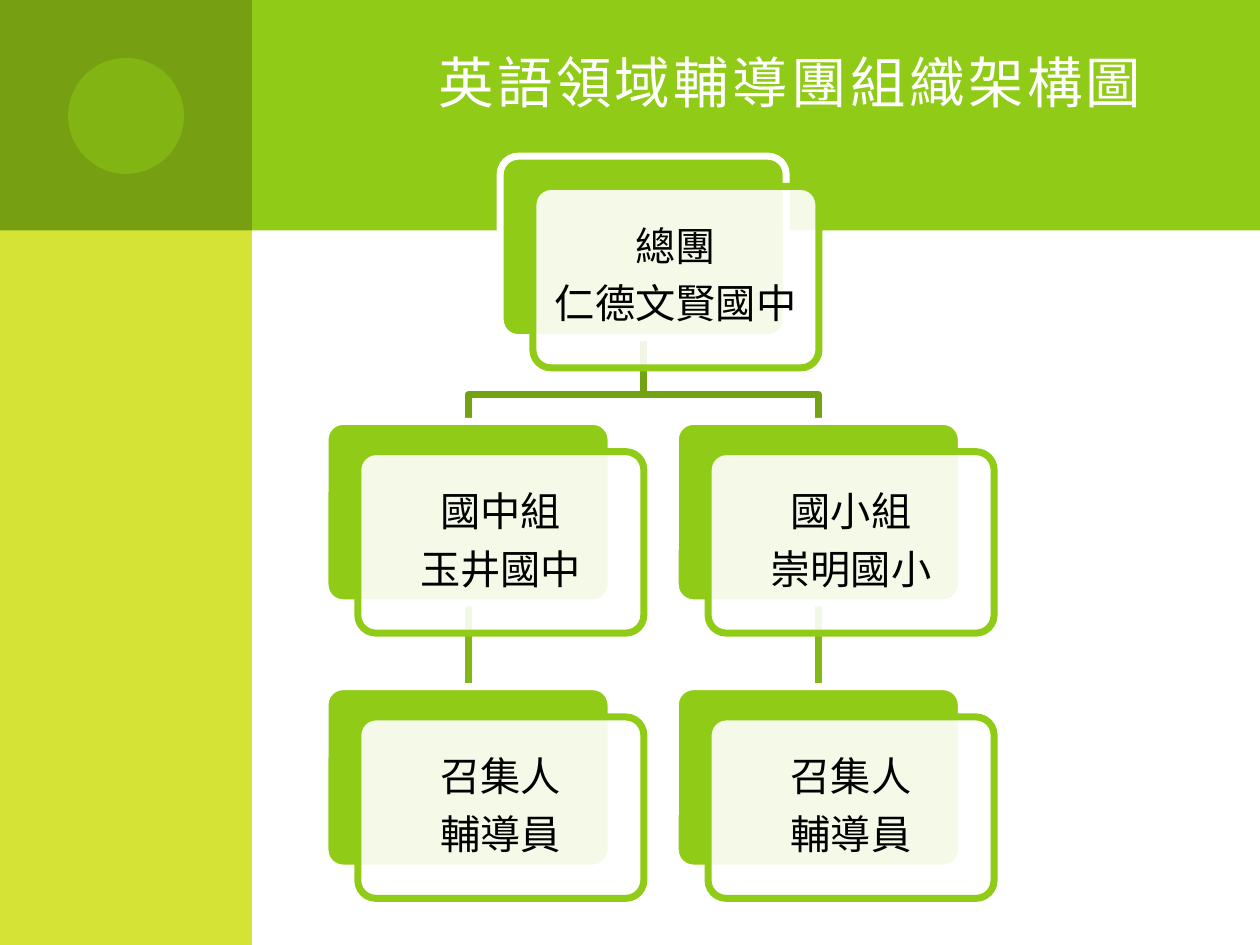
from dataclasses import dataclass

from lxml.etree import SubElement
from pptx import Presentation
from pptx.dml.color import RGBColor
from pptx.enum.shapes import MSO_CONNECTOR, MSO_SHAPE
from pptx.enum.text import MSO_ANCHOR, PP_ALIGN
from pptx.oxml.ns import qn
from pptx.util import Inches, Pt

COLORS = {
    "green": "8FCB17",
    "dark green": "769F11",
    "lime": "D4E336",
    "upper branch": "73A312",
    "lower branch": "82B815",
    "white": "FFFFFF",
    "black": "000000",
}
SLIDE_WIDTH, SLIDE_HEIGHT = 10, 7.5
SIDE_WIDTH = SLIDE_WIDTH * 0.2
BAND_HEIGHT = 1.83

# Chart grid: place of the first cell, and the step from cell to cell
GRID_LEFT, GRID_TOP = 2.58, 1.24
COLUMN_STEP, ROW_STEP = 2.78, 2.105
CARD_WIDTH, CARD_HEIGHT = 2.27, 1.44
FRONT_SHIFT_X, FRONT_SHIFT_Y = 0.26, 0.24
BEND_SHARE = 0.68
LINE_WIDTH = Pt(4)


@dataclass(frozen=True)
class Panel:
    left: float
    top: float
    width: float
    height: float
    color: str
    preset: MSO_SHAPE = MSO_SHAPE.RECTANGLE
    opacity: int = 100


@dataclass(frozen=True)
class Card:
    column: float
    row: int
    text: str

    @property
    def left(self) -> float:
        return GRID_LEFT + self.column * COLUMN_STEP

    @property
    def top(self) -> float:
        return GRID_TOP + self.row * ROW_STEP


PANELS = [
    Panel(0.5, 0, SLIDE_WIDTH - 0.5, BAND_HEIGHT, "green"),
    Panel(0, 0, SIDE_WIDTH, SLIDE_HEIGHT, "lime"),
    Panel(0, 0, SIDE_WIDTH, BAND_HEIGHT, "dark green"),
    Panel(0.54, 0.46, 0.92, 0.92, "green", MSO_SHAPE.OVAL, 50),
]
HEAD = Card(0.5, 0, "總團\n仁德文賢國中")
GROUPS = [Card(0, 1, "國中組\n玉井國中"), Card(1, 1, "國小組\n崇明國小")]
TEAMS = [Card(column, 2, "召集人\n輔導員") for column in (0, 1)]


def rgb(name: str) -> RGBColor:
    return RGBColor.from_string(COLORS[name])


def add_panel(slide, panel: Panel):
    shape = slide.shapes.add_shape(
        panel.preset, Inches(panel.left), Inches(panel.top),
        Inches(panel.width), Inches(panel.height))
    shape.shadow.inherit = False
    shape.line.fill.background()
    shape.fill.solid()
    shape.fill.fore_color.rgb = rgb(panel.color)
    if panel.opacity < 100:
        color = shape._element.spPr.find(qn("a:solidFill"))[0]
        SubElement(color, qn("a:alpha"), val=str(panel.opacity * 1000))
    return shape


def style_line(shape, color: str) -> None:
    shape.line.color.rgb = rgb(color)
    shape.line.width = LINE_WIDTH


def add_title(slide, text: str) -> None:
    box = slide.shapes.add_textbox(
        Inches(1.69), Inches(0.25), Inches(7.81), Inches(0.7))
    text_frame = box.text_frame
    text_frame.word_wrap = True
    text_frame.vertical_anchor = MSO_ANCHOR.MIDDLE
    text_frame.text = text
    paragraph = text_frame.paragraphs[0]
    paragraph.alignment = PP_ALIGN.RIGHT
    run = paragraph.runs[0]
    run.font.name = "Roboto"
    run.font.size = Pt(39.6)
    run.font.color.rgb = rgb("white")
    properties = run.font._element
    properties.set("spc", "200")
    properties.set("cap", "small")


def add_card(slide, card: Card):
    """Draw a filled back plate and a shifted text plate; return the back."""
    back = add_panel(slide, Panel(
        card.left, card.top, CARD_WIDTH, CARD_HEIGHT,
        "green", MSO_SHAPE.ROUNDED_RECTANGLE))
    front = add_panel(slide, Panel(
        card.left + FRONT_SHIFT_X, card.top + FRONT_SHIFT_Y,
        CARD_WIDTH, CARD_HEIGHT, "white", MSO_SHAPE.ROUNDED_RECTANGLE, 90))
    for plate, outline in ((back, "white"), (front, "green")):
        plate.adjustments[0] = 0.1
        style_line(plate, outline)

    text_frame = front.text_frame
    text_frame.word_wrap = True
    text_frame.vertical_anchor = MSO_ANCHOR.MIDDLE
    text_frame.margin_left = text_frame.margin_right = Inches(0.1)
    text_frame.margin_top = text_frame.margin_bottom = Inches(0.1)
    text_frame.text = card.text
    for paragraph in text_frame.paragraphs:
        paragraph.alignment = PP_ALIGN.CENTER
        paragraph.line_spacing = 0.9
        paragraph.space_after = Pt(8)
        font = paragraph.runs[0].font
        font.name = "Calibri"
        font.size = Pt(23)
        font.color.rgb = rgb("black")
    return back


def add_branch(slide, parent: Card, child: Card) -> None:
    """Draw an elbow from the parent's bottom to the child's top."""
    start_x = Inches(parent.left + CARD_WIDTH / 2)
    start_y = Inches(parent.top + CARD_HEIGHT)
    end_x = Inches(child.left + CARD_WIDTH / 2)
    end_y = Inches(child.top)
    bend_y = start_y + int((end_y - start_y) * BEND_SHARE)
    builder = slide.shapes.build_freeform(start_x, start_y)
    builder.add_line_segments(
        [(start_x, bend_y), (end_x, bend_y), (end_x, end_y)], close=False)
    branch = builder.convert_to_shape()
    branch.shadow.inherit = False
    branch.fill.background()
    style_line(branch, "upper branch")


def add_link(slide, upper, lower, behind) -> None:
    """Join two back plates, with the line placed behind the given shape."""
    link = slide.shapes.add_connector(MSO_CONNECTOR.STRAIGHT, 0, 0, 0, 0)
    link.begin_connect(upper, 2)
    link.end_connect(lower, 0)
    style_line(link, "lower branch")
    SubElement(link._element.spPr, qn("a:effectLst"))
    behind._element.addprevious(link._element)


def main() -> None:
    presentation = Presentation()
    presentation.slide_width = Inches(SLIDE_WIDTH)
    presentation.slide_height = Inches(SLIDE_HEIGHT)
    slide = presentation.slides.add_slide(presentation.slide_layouts[6])

    for panel in PANELS:
        add_panel(slide, panel)
    add_title(slide, "英語領域輔導團組織架構圖")

    for group in GROUPS:
        add_branch(slide, HEAD, group)
    head_plate = add_card(slide, HEAD)
    for group, team in zip(GROUPS, TEAMS):
        group_plate = add_card(slide, group)
        team_plate = add_card(slide, team)
        add_link(slide, group_plate, team_plate, head_plate)

    presentation.save("out.pptx")


if __name__ == "__main__":
    main()
